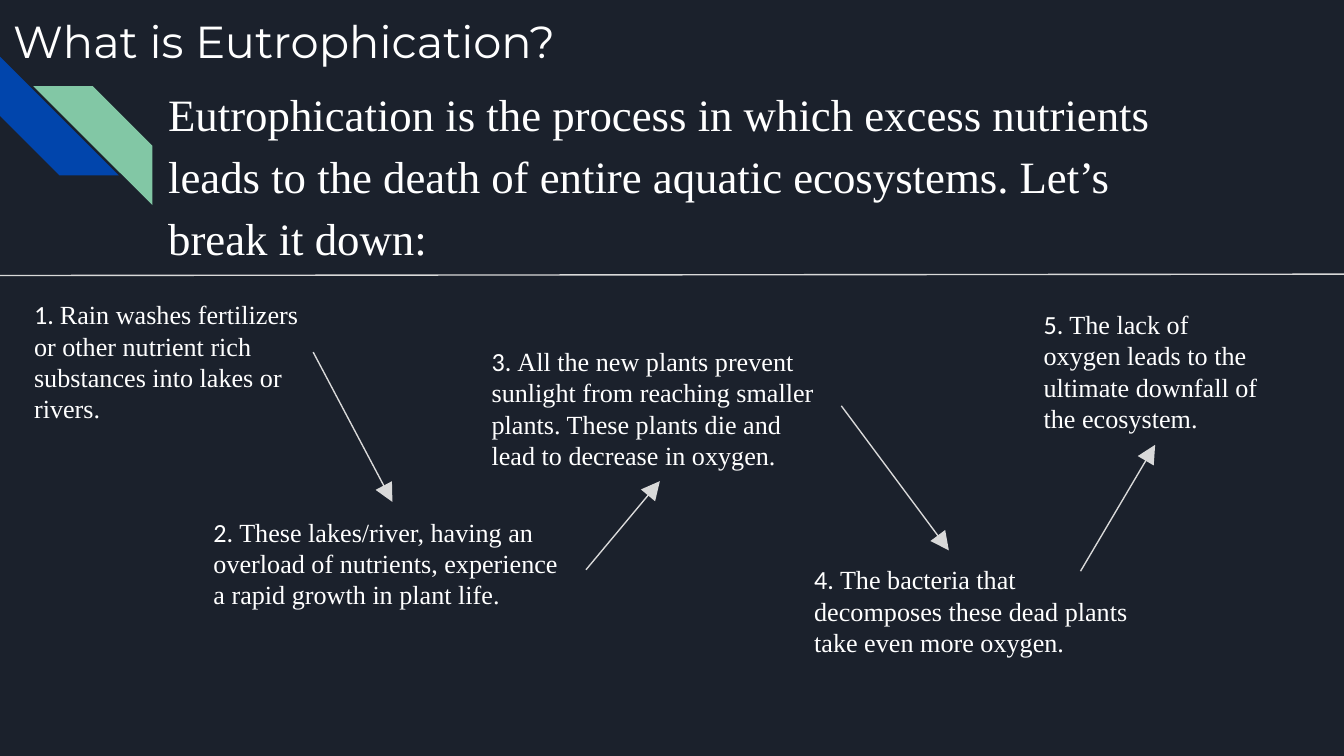
from dataclasses import dataclass

from pptx import Presentation
from pptx.dml.color import RGBColor
from pptx.enum.shapes import MSO_CONNECTOR, MSO_SHAPE
from pptx.oxml.ns import qn
from pptx.util import Inches, Pt
from lxml import etree

STRIPE = MSO_SHAPE.DIAGONAL_STRIPE
STRAIGHT = MSO_CONNECTOR.STRAIGHT
COLS = 100  # grid cells of a tenth of an inch
ROWS = COLS * 9 / 16
CELL = Inches(0.1)


@dataclass(frozen=True)
class Theme:
    background: str = "1B212C"
    text: str = "FFFFFF"
    line: str = "D9D9D9"
    blue: str = "0145AC"
    green: str = "82C7A5"
    title_font: str = "Montserrat"
    body_font: str = "Times New Roman"
    number_font: str = "Calibri"
    large: int = 24
    small: int = 14
    line_width: float = 0.75


class SlideBuilder:
    def __init__(self, slide, theme):
        self.s, self.theme = slide, theme
        fill = slide.background.fill
        fill.solid()
        fill.fore_color.rgb = RGBColor.from_string(theme.background)

    @staticmethod
    def grid(*cells):
        return [round(c * CELL) for c in cells]

    def stripe(self, box, color, rotation=0, flip=False):
        sp = self.s.shapes.add_shape(STRIPE, *self.grid(*box))
        sp.shadow.inherit = False
        sp.fill.solid()
        sp.fill.fore_color.rgb = RGBColor.from_string(color)
        sp.line.fill.background()
        sp.rotation = rotation
        if flip:
            sp.element.spPr.find(qn("a:xfrm")).set("flipH", "1")

    def text(self, box, parts, size, spacing=None):
        """Parts are (text, font) pairs, set one after another."""
        tf = self.s.shapes.add_textbox(*self.grid(*box)).text_frame
        tf.word_wrap = True
        tf.margin_left = tf.margin_right = CELL
        tf.margin_top = tf.margin_bottom = CELL
        p = tf.paragraphs[0]
        if spacing:
            p.line_spacing = spacing
        for words, font in parts:
            r = p.add_run()
            r.text = words
            r.font.name = font
            r.font.size = Pt(size)
            r.font.color.rgb = RGBColor.from_string(self.theme.text)

    def step(self, number, box, words):
        t = self.theme
        self.text(box, [(f"{number}. ", t.number_font), (words, t.body_font)], t.small)

    def line(self, start, end, arrow=False):
        cx = self.s.shapes.add_connector(STRAIGHT, *self.grid(*start, *end))
        cx.line.color.rgb = RGBColor.from_string(self.theme.line)
        cx.line.width = Pt(self.theme.line_width)
        sp_pr = cx.element.spPr
        if arrow:
            etree.SubElement(sp_pr.find(qn("a:ln")), qn("a:tailEnd"),
                             type="triangle", w="lg", len="lg")
        etree.SubElement(sp_pr, qn("a:effectLst"))


STEPS = [
    ((1.55, 21.23, 21.8, 10),
     "Rain washes fertilizers or other nutrient rich substances into lakes or rivers."),
    ((14.9, 37.4, 28.7, 10),
     "These lakes/river, having an overload of nutrients, experience a rapid growth "
     "in plant life."),
    ((35.6, 24.7, 27, 11.1),
     "All the new plants prevent sunlight from reaching smaller plants. These plants "
     "die and lead to decrease in oxygen."),
    ((59.6, 40.95, 27, 10),
     "The bacteria that decomposes these dead plants take even more oxygen."),
    ((76.67, 21.95, 18.6, 11.1),
     "The lack of oxygen leads to the ultimate downfall of the ecosystem."),
]
ARROWS = [
    ((23.3, 26.2), (29.2, 37.35)),
    ((43.6, 42.4), (49.1, 35.8)),
    ((62.6, 30.2), (70.6, 40.95)),
    ((80.4, 42.5), (85.95, 33.1)),
]


def main():
    prs = Presentation()
    prs.slide_width, prs.slide_height = SlideBuilder.grid(COLS, ROWS)
    theme = Theme()
    b = SlideBuilder(prs.slides.add_slide(prs.slide_layouts[6]), theme)

    # Corner stripes
    b.stripe((0, 4.2, 8.85, 8.85), theme.blue, rotation=270)
    b.stripe((2.5, 6.42, 8.85, 8.85), theme.green, flip=True)

    # Title and definition
    b.text((0, 0, 77, 10), [("What is Eutrophication?", theme.title_font)], theme.large)
    definition = ("Eutrophication is the process in which excess nutrients leads to the "
                  "death of entire aquatic ecosystems. Let’s break it down:")
    b.text((11.53, 4.87, 77, 12.6), [(definition, theme.body_font)], theme.large, 1.15)
    b.line((0, 20.5), (COLS, 20.4))

    # Numbered steps and the arrows between them
    for number, (box, words) in enumerate(STEPS, 1):
        b.step(number, box, words)
    for start, end in ARROWS:
        b.line(start, end, arrow=True)

    prs.save("out.pptx")


if __name__ == "__main__":
    main()
